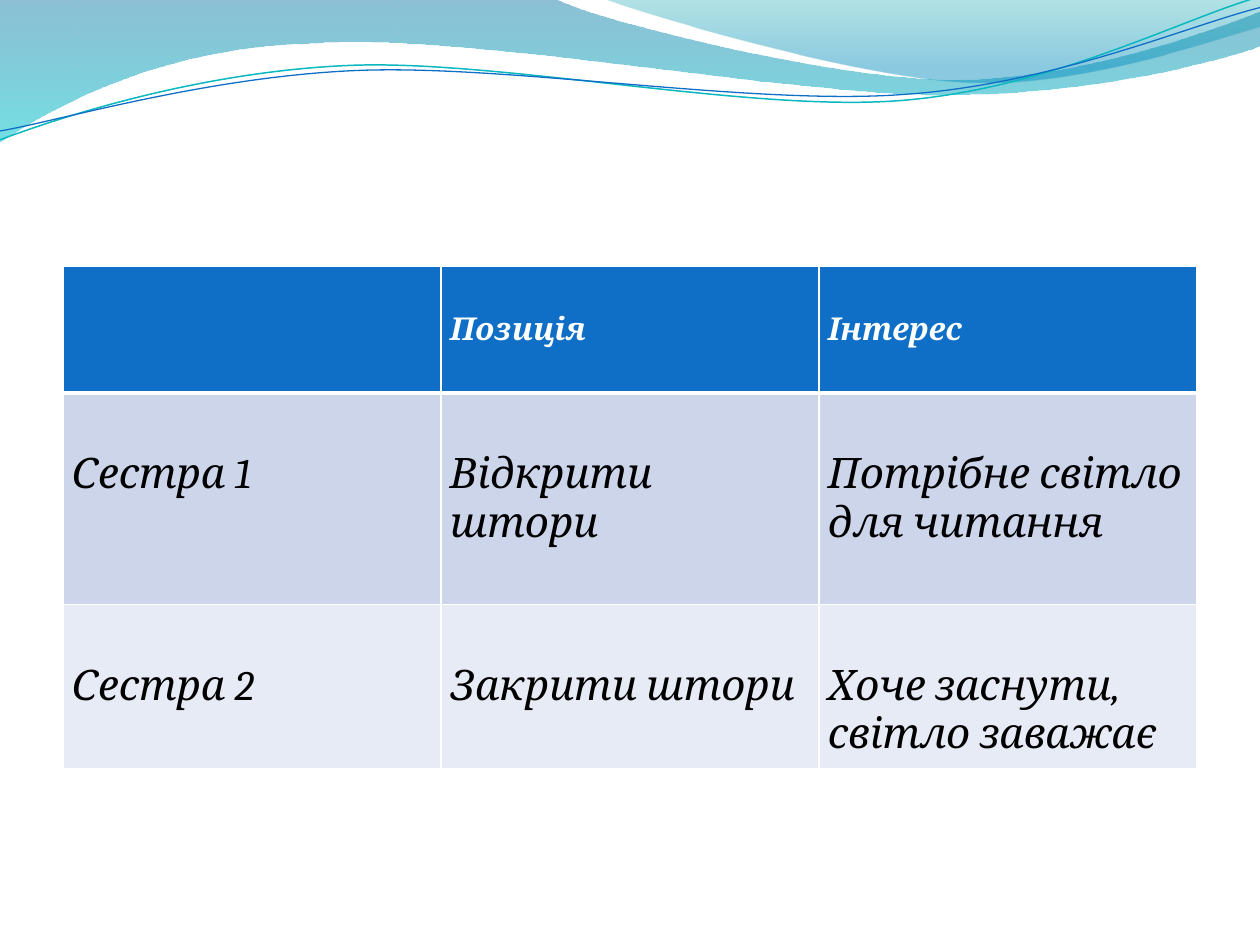
import pptx
import pptx.util
import pptx.dml.color
import pptx.enum.text
import pptx.oxml.ns
import lxml.etree

Inches, Pt = pptx.util.Inches, pptx.util.Pt
qn, RGB = pptx.oxml.ns.qn, pptx.dml.color.RGBColor.from_string

COLORS = {
    "blue": "0F6FC6", "teal": "0AB8BF", "white": "FFFFFF", "black": "000000",
    "wave top": "0074A1", "wave bottom": "00C6CF",
    "crest top": "00A1A9", "crest bottom": "008BBF",
    "band 1": "CCD5EA", "band 2": "E7EBF5",
}

prs = pptx.Presentation()
prs.slide_width, prs.slide_height = Inches(10), Inches(7.5)
s = prs.slides.add_slide(prs.slide_layouts[6])


def add_curve(points, closed):
    """Outline in inches: a pair is a corner, six numbers a Bezier segment."""
    anchors = [(Inches(point[-2]), Inches(point[-1])) for point in points]
    fb = s.shapes.build_freeform(*anchors[0])
    fb.add_line_segments(anchors[1:], close=closed)
    sp = fb.convert_to_shape()
    sp.shadow.inherit = False
    # Bend the straight segments that have control points
    segments = list(sp._element.iter(qn("a:lnTo")))
    for segment, point in zip(segments, points[1:]):
        if len(point) == 6:
            segment.clear()
            segment.tag = qn("a:cubicBezTo")
            for x, y in zip(point[::2], point[1::2]):
                pt = lxml.etree.SubElement(segment, qn("a:pt"))
                pt.set("x", str(Inches(x) - sp.left))
                pt.set("y", str(Inches(y) - sp.top))
    return sp


# Translucent waves: outline, then (position, colour, opacity) of both stops
waves = [
    ([(0, 0), (4.4, -0.01), (4.76, 0.17, 6.64, 0.63, 7.58, 0.63),
      (8.53, 0.63, 9.58, 0.26, 10, 0.09), (10.01, 0.36),
      (9.83, 0.44, 8.7, 0.76, 7.46, 0.75), (6.22, 0.75, 3.82, 0.28, 2.57, 0.34),
      (1.29, 0.36, 0.46, 0.83, -0.01, 1.13)],
     [(0, "wave top", 45), (1, "wave bottom", 55)]),
    ([(4.79, -0.01), (5.09, 0.11, 6.82, 0.62, 7.69, 0.65),
      (8.56, 0.69, 9.61, 0.32, 10, 0.21), (10, 0)],
     [(0, "crest top", 30), (0.8, "crest bottom", 45)]),
]
for points, stops in waves:
    sp = add_curve(points, True)
    sp.line.fill.background()
    sp.fill.gradient()
    sp.fill.gradient_angle = 270
    for stop, (position, color, opacity) in zip(sp.fill.gradient_stops, stops):
        stop.position = position
        stop.color.rgb = RGB(COLORS[color])
    for clr, (position, color, opacity) in zip(sp._element.iter(qn("a:srgbClr")), stops):
        lxml.etree.SubElement(clr, qn("a:alpha")).set("val", str(opacity * 1000))

# Thin lines under the waves
lines = [
    ("teal", 0.85, [(0, 1.11), (0.48, 0.93, 1.58, 0.57, 2.77, 0.52),
                    (3.95, 0.47, 5.93, 0.89, 7.13, 0.8),
                    (8.33, 0.71, 9.38, 0.15, 9.98, -0.02)]),
    ("blue", 0.75, [(0, 1.04), (0.47, 0.96, 1.64, 0.61, 2.83, 0.56),
                    (4.03, 0.51, 5.97, 0.84, 7.17, 0.75),
                    (8.36, 0.67, 9.41, 0.21, 10, 0.06)]),
]
for color, width, points in lines:
    sp = add_curve(points, False)
    sp.fill.background()
    sp.line.color.rgb = RGB(COLORS[color])
    sp.line.width = Pt(width)

# Table of positions and interests
rows = [
    ["", "Позиція", "Інтерес"],
    ["Сестра 1", "Відкрити штори", "Потрібне світло для читання"],
    ["Сестра 2", "Закрити штори", "Хоче заснути, світло заважає"],
]
# Row height, fill, text colour, size, space above the text
styles = [
    (1.01, "blue", "white", 18, 0.37),
    (1.68, "band 1", "black", 24, 0.46),
    (1.3, "band 2", "black", 24, 0.46),
]
table = s.shapes.add_table(3, 3, Inches(0.5), Inches(2.11), Inches(9),
                           Inches(sum(style[0] for style in styles))).table
for r, (texts, style) in enumerate(zip(rows, styles)):
    height, fill, color, size, top = style
    table.rows[r].height = Inches(height)
    for c, text in enumerate(texts):
        cell = table.cell(r, c)
        cell.margin_left = cell.margin_right = Inches(0.07)
        cell.margin_top, cell.margin_bottom = Inches(top), Inches(0.04)
        cell.vertical_anchor = pptx.enum.text.MSO_ANCHOR.TOP
        cell.text_frame.text = text
        for run in cell.text_frame.paragraphs[0].runs:
            run.font.name, run.font.size = "Cambria", Pt(size)
            run.font.bold, run.font.italic = r == 0, True
            run.font.color.rgb = RGB(COLORS[color])

        # White borders, thicker between header and body
        tcPr = cell._tc.get_or_add_tcPr()
        for side in ("L", "R", "T", "B"):
            thick = (r, side) in ((0, "B"), (1, "T"))
            ln = lxml.etree.SubElement(tcPr, qn("a:ln" + side))
            ln.set("w", str(Pt(3 if thick else 1)))
            solid = lxml.etree.SubElement(ln, qn("a:solidFill"))
            lxml.etree.SubElement(solid, qn("a:srgbClr")).set("val", COLORS["white"])
        cell.fill.solid()
        cell.fill.fore_color.rgb = RGB(COLORS[fill])

prs.save("out.pptx")
